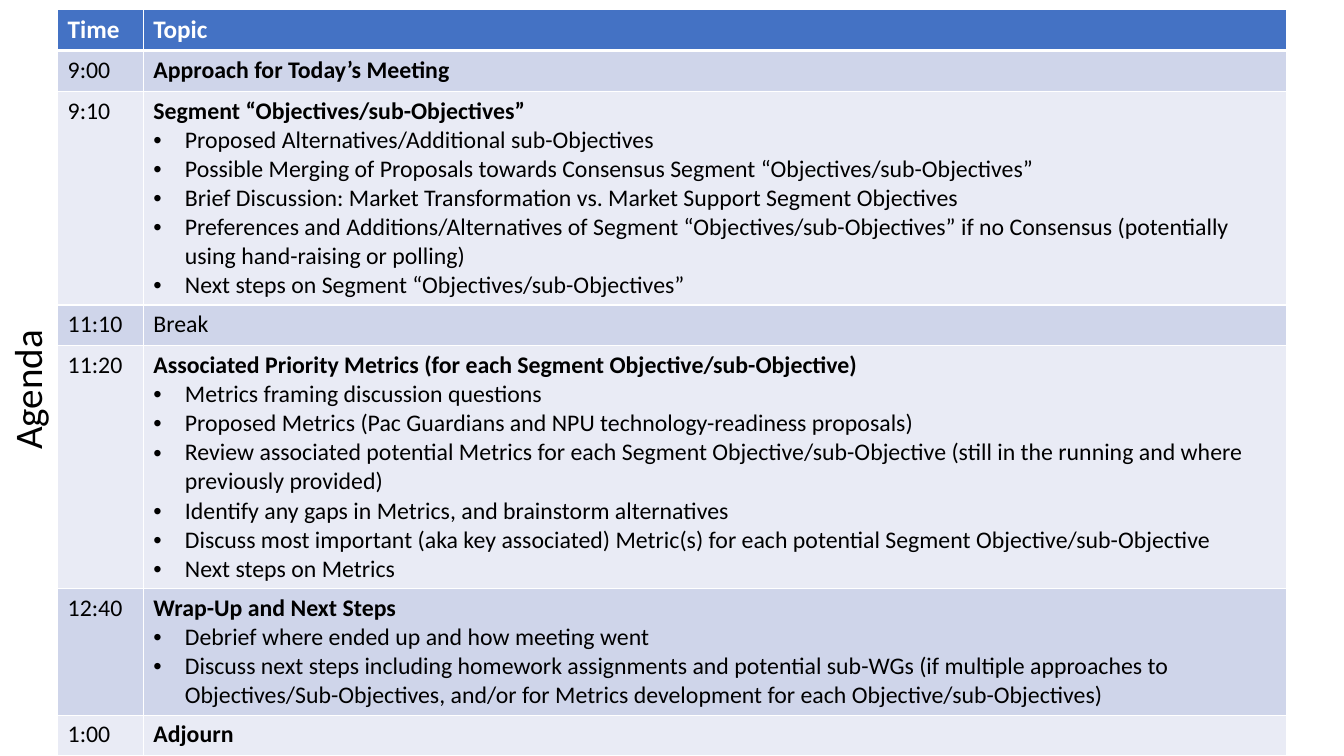
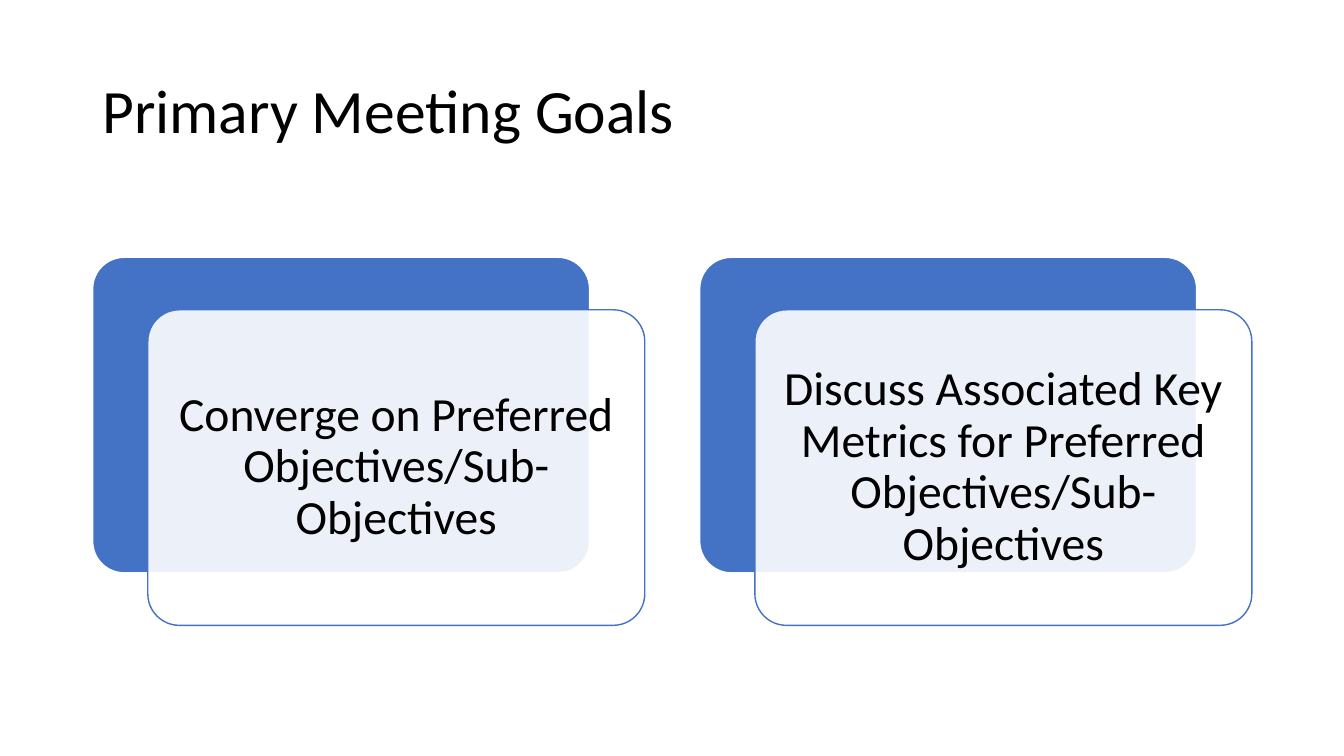
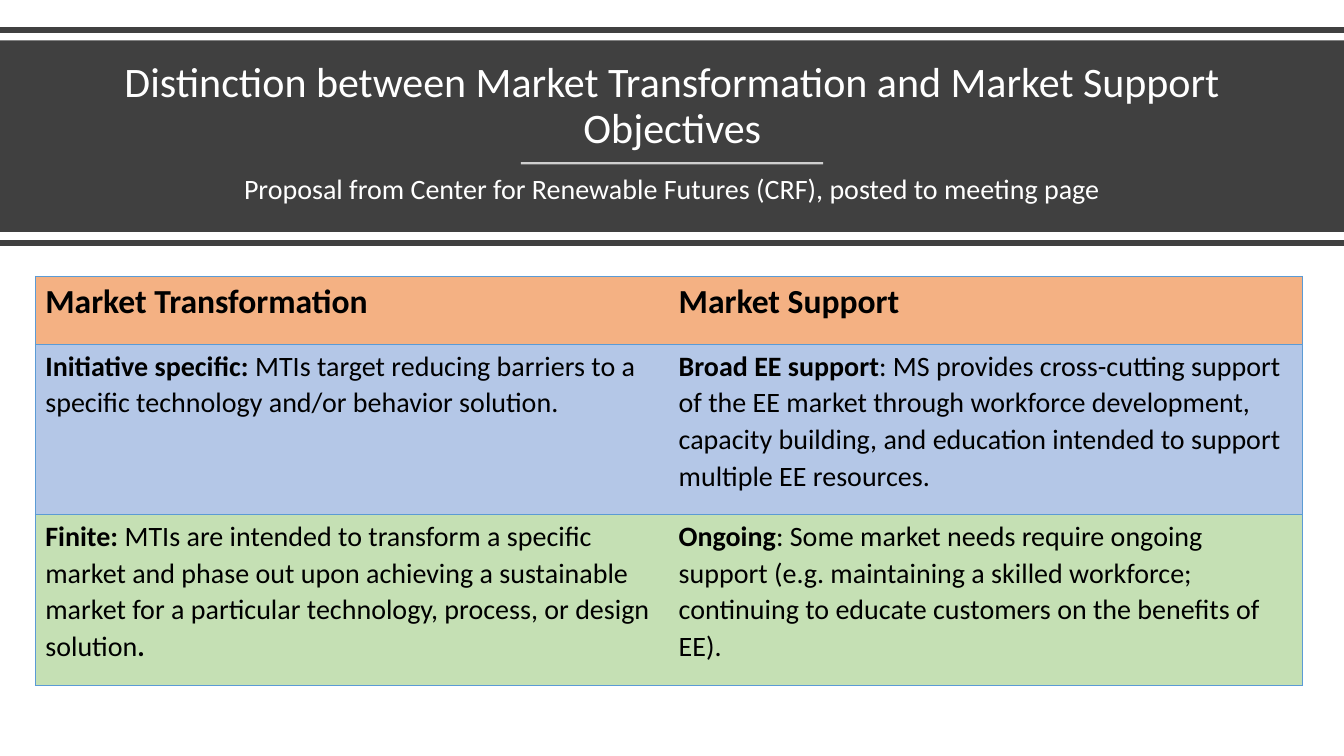
from dataclasses import dataclass

from lxml import etree
from pptx import Presentation
from pptx import util as u
from pptx.dml.color import RGBColor
from pptx.enum import shapes, text
from pptx.oxml import ns

Pt = u.Pt
FONT = "Calibri"
COLORS = {
    "black": "000000",
    "white": "FFFFFF",
    "blue": "4472C4",
    "band_dark": "CFD5EA",
    "band_light": "E9EBF5",
    "charcoal": "404040",
    "border": "5B9BD5",
    "orange": "F4B183",
    "sky": "B4C7E7",
    "green": "C5E0B4",
}
SLIDE_WIDTH, SLIDE_HEIGHT = 960, 540
TITLE_ONLY = 5
LEFT, CENTER = text.PP_ALIGN.LEFT, text.PP_ALIGN.CENTER
TOP, MIDDLE, BOTTOM = (
    text.MSO_ANCHOR.TOP,
    text.MSO_ANCHOR.MIDDLE,
    text.MSO_ANCHOR.BOTTOM,
)


@dataclass(frozen=True)
class Box:
    left: float
    top: float
    width: float
    height: float

    def lengths(self):
        return Pt(self.left), Pt(self.top), Pt(self.width), Pt(self.height)


@dataclass(frozen=True)
class AgendaItem:
    time: str
    topic: str
    points: tuple[str, ...] = ()


@dataclass(frozen=True)
class Comparison:
    color: str
    size: float
    height: float
    anchor: text.MSO_ANCHOR
    texts: tuple[str, str]


@dataclass(frozen=True)
class Rule:
    start: float
    end: float
    y: float
    color: str
    weight: float
    opacity: int = 100


AGENDA = (
    AgendaItem("9:00", "*Approach for Today’s Meeting*"),
    AgendaItem("9:10", "*Segment “Objectives/sub-Objectives”*", (
        "Proposed Alternatives/Additional sub-Objectives",
        "Possible Merging of Proposals towards Consensus Segment “Objectives/sub-Objectives”",
        "Brief Discussion: Market Transformation vs. Market Support Segment Objectives",
        "Preferences and Additions/Alternatives of Segment “Objectives/sub-Objectives” "
        "if no Consensus (potentially using hand-raising or polling)",
        "Next steps on Segment “Objectives/sub-Objectives”",
    )),
    AgendaItem("11:10", "Break"),
    AgendaItem("11:20", "*Associated Priority Metrics (for each Segment Objective/sub-Objective)*", (
        "Metrics framing discussion questions",
        "Proposed Metrics (Pac Guardians and NPU technology-readiness proposals)",
        "Review associated potential Metrics for each Segment Objective/sub-Objective "
        "(still in the running and where previously provided)",
        "Identify any gaps in Metrics, and brainstorm alternatives",
        "Discuss most important (aka key associated) Metric(s) for each potential "
        "Segment Objective/sub-Objective",
        "Next steps on Metrics",
    )),
    AgendaItem("12:40", "*Wrap-Up and Next Steps*", (
        "Debrief where ended up and how meeting went",
        "Discuss next steps including homework assignments and potential sub-WGs "
        "(if multiple approaches to Objectives/Sub-Objectives, and/or for Metrics "
        "development for each Objective/sub-Objectives)",
    )),
    AgendaItem("1:00", "*Adjourn*"),
)

GOALS = (
    "Converge on Preferred Objectives/Sub-Objectives",
    "Discuss Associated Key Metrics for Preferred Objectives/Sub-Objectives",
)

COMPARISONS = (
    Comparison("orange", 24, 48.4, BOTTOM, ("*Market Transformation*", "*Market Support*")),
    Comparison("sky", 20, 121.8, TOP, (
        "*Initiative specific: *MTIs target reducing barriers to a specific technology "
        "and/or behavior solution.",
        "*Broad EE support*: MS provides cross-cutting support of the EE market through "
        "workforce development, capacity building, and education intended to support "
        "multiple EE resources.",
    )),
    Comparison("green", 20, 121.8, TOP, (
        "*Finite: *MTIs are intended to transform a specific market and phase out upon "
        "achieving a sustainable market for a particular technology, process, or design "
        "solution*.*",
        "*Ongoing*: Some market needs require ongoing support (e.g. maintaining a skilled "
        "workforce; continuing to educate customers on the benefits of EE).",
    )),
)

RULES = (
    Rule(0, SLIDE_WIDTH, 21.6, "charcoal", 4),
    Rule(372, 588, 116.6, "white", 1.5, 75),
    Rule(0, SLIDE_WIDTH, 173.4, "charcoal", 4),
)


def rgb(name: str) -> RGBColor:
    return RGBColor.from_string(COLORS[name])


def write(frame, content: str, *, size: float, color: str = "black", align=LEFT,
          spacing: float = 1.0, before: float = 0, bullet: bool = False) -> None:
    first = frame.paragraphs[0]
    paragraph = frame.add_paragraph() if first.runs else first
    paragraph.alignment = align
    paragraph.line_spacing = spacing
    paragraph.space_before = Pt(before)
    if bullet:
        properties = paragraph._p.get_or_add_pPr()
        indent = Pt(22.5)
        properties.set("marL", str(indent))
        properties.set("indent", str(-indent))
        etree.SubElement(properties, ns.qn("a:buFont"), typeface="Arial")
        etree.SubElement(properties, ns.qn("a:buChar"), char="•")
    for index, part in enumerate(content.split("*")):
        if part:
            run = paragraph.add_run()
            run.text = part
            run.font.name = FONT
            run.font.size = Pt(size)
            run.font.bold = index % 2 == 1
            run.font.color.rgb = rgb(color)


def add_title(slide, content: str, box: Box, *, anchor=MIDDLE, rotation: float = 0,
              **text_format) -> None:
    title = slide.shapes.title
    title.left, title.top, title.width, title.height = box.lengths()
    title.rotation = rotation
    frame = title.text_frame
    frame.auto_size = text.MSO_AUTO_SIZE.NONE
    frame.vertical_anchor = anchor
    write(frame, content, spacing=0.9, **text_format)
    slide.shapes._spTree.append(title._element)


def set_opacity(shape, percent: int) -> None:
    color = shape._element.spPr.find(".//" + ns.qn("a:srgbClr"))
    etree.SubElement(color, ns.qn("a:alpha"), val=str(percent * 1000))


def add_box(slide, kind, box: Box, fill: str, line: str | None = None):
    shape = slide.shapes.add_shape(kind, *box.lengths())
    shape.shadow.inherit = False
    shape.fill.solid()
    shape.fill.fore_color.rgb = rgb(fill)
    if line:
        shape.line.color.rgb = rgb(line)
        shape.line.width = Pt(1)
    else:
        shape.line.fill.background()
    return shape


def add_rule(slide, rule: Rule) -> None:
    connector = slide.shapes.add_connector(
        shapes.MSO_CONNECTOR.STRAIGHT,
        Pt(rule.start), Pt(rule.y), Pt(rule.end), Pt(rule.y))
    connector.line.color.rgb = rgb(rule.color)
    connector.line.width = Pt(rule.weight)
    etree.SubElement(connector._element.spPr, ns.qn("a:effectLst"))
    if rule.opacity < 100:
        set_opacity(connector, rule.opacity)


def add_table(slide, left: float, top: float, widths: list[float], heights: list[float]):
    box = Box(left, top, sum(widths), sum(heights))
    table = slide.shapes.add_table(len(heights), len(widths), *box.lengths()).table
    table.first_row = table.horz_banding = False
    for column, width in zip(table.columns, widths):
        column.width = Pt(width)
    for row, height in zip(table.rows, heights):
        row.height = Pt(height)
    return table


def format_cell(cell, fill: str, border: str, weights: dict[str, float]) -> None:
    properties = cell._tc.get_or_add_tcPr()
    for side in "LRTB":
        weight = weights.get(side, 0)
        line = etree.SubElement(properties, ns.qn(f"a:ln{side}"), w=str(Pt(weight)))
        if weight:
            solid = etree.SubElement(line, ns.qn("a:solidFill"))
            etree.SubElement(solid, ns.qn("a:srgbClr"), val=COLORS[border])
        else:
            etree.SubElement(line, ns.qn("a:noFill"))
    cell.fill.solid()
    cell.fill.fore_color.rgb = rgb(fill)


def build_agenda(slide) -> None:
    add_title(slide, "Agenda", Box(-249, 260, 540, 37), rotation=270, size=27.9, align=CENTER)
    items = (AgendaItem("*Time*", "*Topic*"), *AGENDA)
    table = add_table(slide, 41.2, 6.8, [61.2, 816.4], [29.2] * len(items))
    for row, item in enumerate(items):
        header = row == 0
        fill = "blue" if header else ("band_light", "band_dark")[row % 2]
        weights = {"L": 1, "R": 1, "T": 3 if row == 1 else 1, "B": 3 if header else 1}
        for column, content in enumerate((item.time, item.topic)):
            cell = table.cell(row, column)
            format_cell(cell, fill, "white", weights)
            write(cell.text_frame, content, size=18 if header else 17,
                  color="white" if header else "black")
        for point in item.points:
            write(table.cell(row, 1).text_frame, point, size=17, bullet=True)


def build_goals(slide) -> None:
    add_title(slide, "Primary Meeting Goals", Box(66, 28.8, 828, 104.4), size=44)
    width, height, pitch = 355, 225.4, 433.6
    rounded = shapes.MSO_SHAPE.ROUNDED_RECTANGLE
    for index, goal in enumerate(GOALS):
        left, top = 66.2 + index * pitch, 183.8
        back = add_box(slide, rounded, Box(left, top, width, height), "blue", "white")
        front = add_box(slide, rounded, Box(left + 39.4, top + 37.5, width, height),
                        "white", "blue")
        back.adjustments[0] = front.adjustments[0] = 0.1
        set_opacity(front, 90)
        frame = front.text_frame
        frame.word_wrap = True
        frame.vertical_anchor = MIDDLE
        frame.margin_left = frame.margin_right = Pt(10)
        frame.margin_top = frame.margin_bottom = Pt(10)
        write(frame, goal, size=34, align=CENTER, spacing=0.9)


def build_distinction(slide) -> None:
    add_box(slide, shapes.MSO_SHAPE.RECTANGLE, Box(0, 28.8, SLIDE_WIDTH, 136.8), "charcoal")
    add_title(slide, "Distinction between Market Transformation and Market Support Objectives",
              Box(41.8, 38.9, 877, 73.4), anchor=BOTTOM, size=30, color="white", align=CENTER)
    subtitle = slide.shapes.add_textbox(*Box(120, 121.7, 720, 33.1).lengths())
    subtitle.text_frame.word_wrap = True
    write(subtitle.text_frame,
          "Proposal from Center for Renewable Futures (CRF), posted to meeting page",
          size=20, color="white", align=CENTER, spacing=0.9, before=10)
    for rule in RULES:
        add_rule(slide, rule)
    table = add_table(slide, 25.2, 197.3, [452.4, 452.6], [row.height for row in COMPARISONS])
    for row, comparison in enumerate(COMPARISONS):
        for column, content in enumerate(comparison.texts):
            cell = table.cell(row, column)
            outer_side = "LR"[column]
            format_cell(cell, comparison.color, "border", {outer_side: 0.5, "T": 0.5, "B": 0.5})
            cell.vertical_anchor = comparison.anchor
            cell.margin_left = cell.margin_right = Pt(7.2)
            cell.margin_top, cell.margin_bottom = Pt(2.2), Pt(15)
            write(cell.text_frame, content, size=comparison.size, spacing=1.07)


def main() -> None:
    presentation = Presentation()
    presentation.slide_width = Pt(SLIDE_WIDTH)
    presentation.slide_height = Pt(SLIDE_HEIGHT)
    for build in (build_agenda, build_goals, build_distinction):
        build(presentation.slides.add_slide(presentation.slide_layouts[TITLE_ONLY]))
    presentation.save("out.pptx")


if __name__ == "__main__":
    main()
